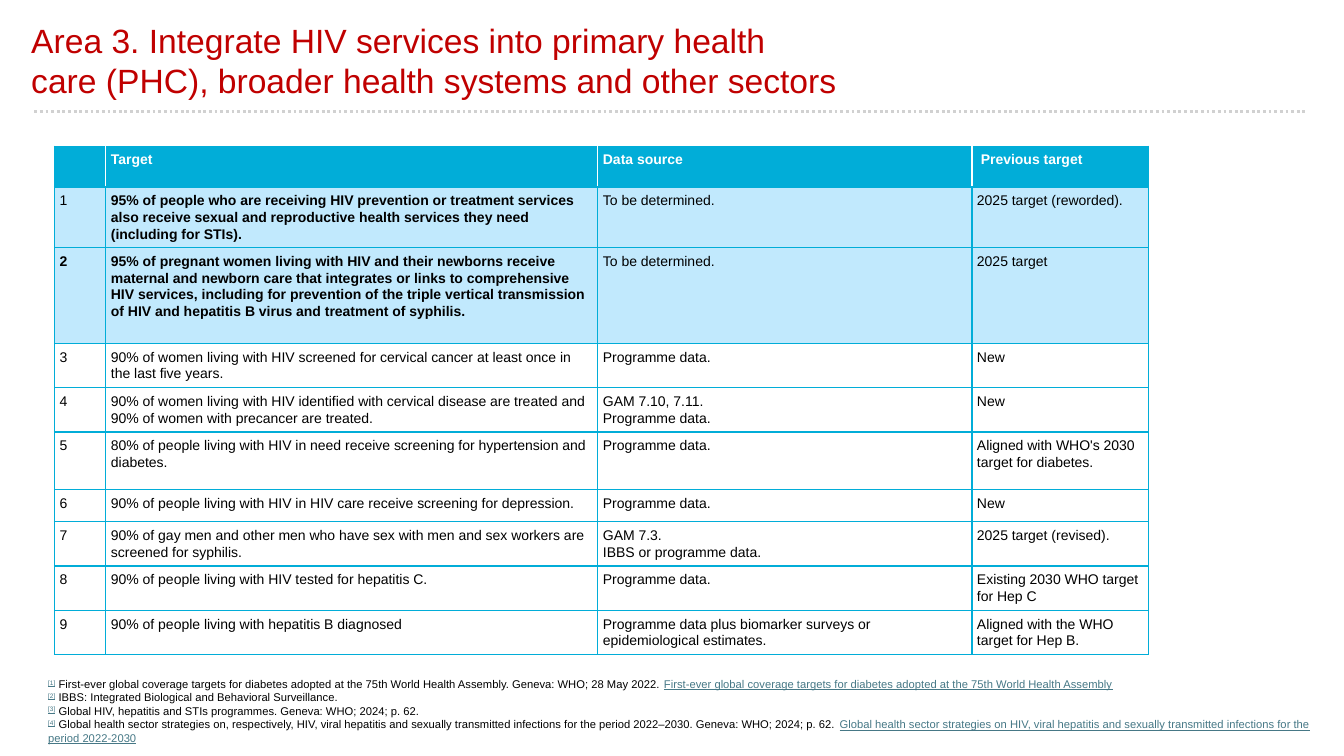
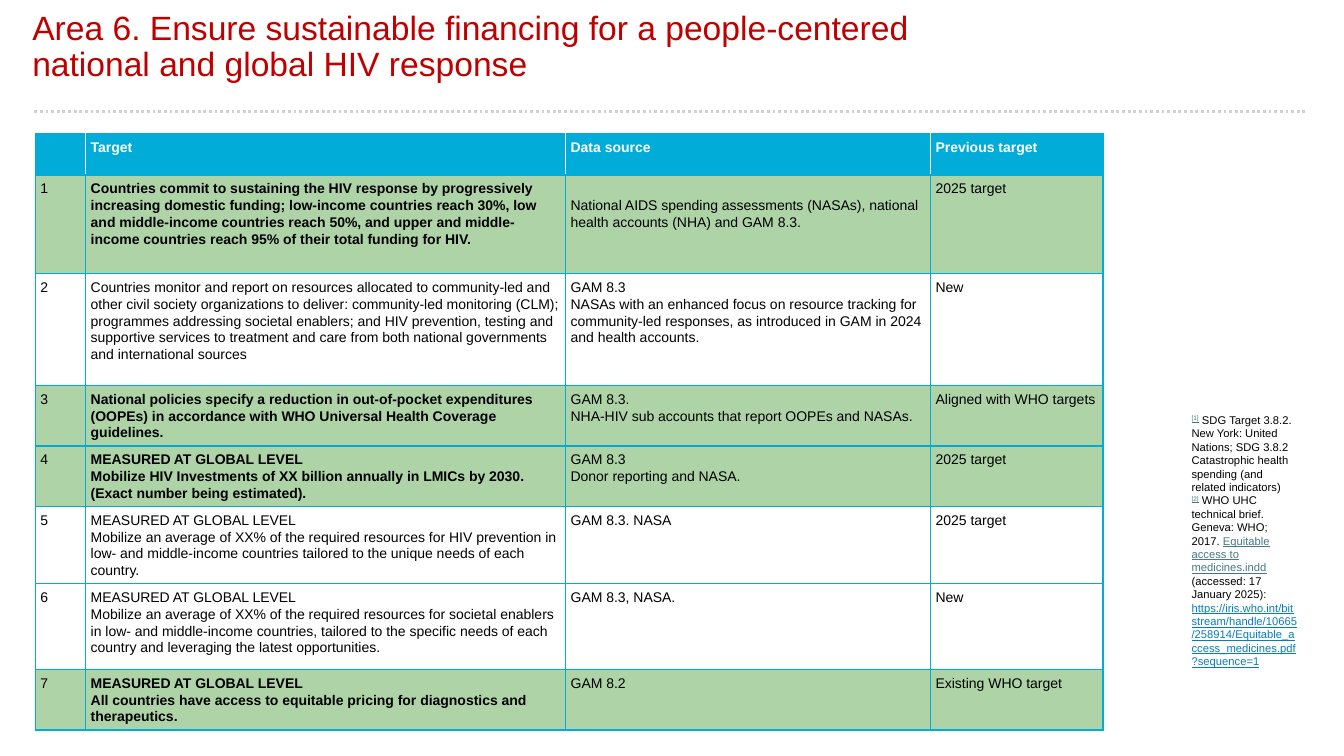
from lxml.etree import SubElement as Sub
from pptx import Presentation
from pptx.dml.color import RGBColor as RGB
from pptx.enum.dml import MSO_LINE as Dash
from pptx.enum.shapes import MSO_CONNECTOR as Link
from pptx.enum.text import MSO_ANCHOR as Anchor, PP_ALIGN as Align
from pptx.oxml.ns import qn
from pptx.util import Inches, Pt

FONT = "Arial"
RED = RGB(0xC0, 0x00, 0x00)
CYAN = RGB(0x01, 0xAD, 0xD8)
SKY = RGB(0xC1, 0xE9, 0xFD)
GREEN = RGB(0xAE, 0xD3, 0xA7)
GREY = RGB(0xD1, 0xD1, 0xD1)
TEAL = RGB(0x46, 0x78, 0x86)
BLUE = RGB(0x06, 0x7E, 0xBA)
WHITE = RGB(0xFF, 0xFF, 0xFF)
BLACK = RGB(0x00, 0x00, 0x00)

HEADS = ("", "Target", "Data source", "Previous target")
GLOBAL = "MEASURED AT GLOBAL LEVEL\n"
PROG = "Programme data."

CARE = [
    (0.57, "95% of people who are receiving HIV prevention or treatment services also "
     "receive sexual and reproductive health services they need (including for STIs).",
     "To be determined.", "2025 target (reworded)."),
    (0.95, "95% of pregnant women living with HIV and their newborns receive maternal and "
     "newborn care that integrates or links to comprehensive HIV services, including for "
     "prevention of the triple vertical transmission of HIV and hepatitis B virus and "
     "treatment of syphilis.", "To be determined.", "2025 target"),
    (0.44, "90% of women living with HIV screened for cervical cancer at least once in the "
     "last five years.", PROG, "New"),
    (0.44, "90% of women living with HIV identified with cervical disease are treated and "
     "90% of women with precancer are treated.", "GAM 7.10, 7.11.\n" + PROG, "New"),
    (0.57, "80% of people living with HIV in need receive screening for hypertension and "
     "diabetes.", PROG, "Aligned with WHO's 2030 target for diabetes."),
    (0.32, "90% of people living with HIV in HIV care receive screening for depression.",
     PROG, "New"),
    (0.44, "90% of gay men and other men who have sex with men and sex workers are screened "
     "for syphilis.", "GAM 7.3.\nIBBS or programme data.", "2025 target (revised)."),
    (0.44, "90% of people living with HIV tested for hepatitis C.", PROG,
     "Existing 2030 WHO target for Hep C"),
    (0.44, "90% of people living with hepatitis B diagnosed",
     "Programme data plus biomarker surveys or epidemiological estimates.",
     "Aligned with the WHO target for Hep B."),
]

FUNDS = [
    (0.98, "Countries commit to sustaining the HIV response by progressively increasing "
     "domestic funding; low-income countries reach 30%, low and middle-income countries "
     "reach 50%, and upper and middle-income countries reach 95% of their total funding "
     "for HIV.", "National AIDS spending assessments (NASAs), national health accounts "
     "(NHA) and GAM 8.3.", "2025 target"),
    (1.11, "Countries monitor and report on resources allocated to community-led and other "
     "civil society organizations to deliver: community-led monitoring (CLM); programmes "
     "addressing societal enablers; and HIV prevention, testing and supportive services to "
     "treatment and care from both national governments and international sources",
     "GAM 8.3\nNASAs with an enhanced focus on resource tracking for community-led "
     "responses, as introduced in GAM in 2024 and health accounts.", "New"),
    (0.58, "National policies specify a reduction in out-of-pocket expenditures (OOPEs) in "
     "accordance with WHO Universal Health Coverage guidelines.",
     "GAM 8.3.\nNHA-HIV sub accounts that report OOPEs and NASAs.",
     "Aligned with WHO targets"),
    (0.58, GLOBAL + "Mobilize HIV Investments of XX billion annually in LMICs by 2030. "
     "(Exact number being estimated).", "GAM 8.3\nDonor reporting and NASA.", "2025 target"),
    (0.71, GLOBAL + "Mobilize an average of XX% of the required resources for HIV prevention "
     "in low- and middle-income countries tailored to the unique needs of each country.",
     "GAM 8.3. NASA", "2025 target"),
    (0.85, GLOBAL + "Mobilize an average of XX% of the required resources for societal "
     "enablers in low- and middle-income countries, tailored to the specific needs of each "
     "country and leveraging the latest opportunities.", "GAM 8.3, NASA.", "New"),
    (0.45, GLOBAL + "All countries have access to equitable pricing for diagnostics and "
     "therapeutics.", "GAM 8.2", "Existing WHO target"),
]

CARE_NOTES = [
    [(" First-ever global coverage targets for diabetes adopted at the 75th World Health "
      "Assembly. Geneva: WHO; 28 May 2022. ", BLACK),
     ("First-ever global coverage targets for diabetes adopted at the 75th World Health "
      "Assembly", TEAL)],
    [(" IBBS: Integrated Biological and Behavioral Surveillance.", BLACK)],
    [(" Global HIV, hepatitis and STIs programmes. Geneva: WHO; 2024; p. 62.", BLACK)],
    [(" Global health sector strategies on, respectively, HIV, viral hepatitis and sexually "
      "transmitted infections for the period 2022–2030. Geneva: WHO; 2024; p. 62. ", BLACK),
     ("Global health sector strategies on HIV, viral hepatitis and sexually transmitted "
      "infections for the period 2022-2030", TEAL)],
]

FUND_NOTES = [
    [(" SDG Target 3.8.2. New York: United Nations; SDG 3.8.2 Catastrophic health spending "
      "(and related indicators)", BLACK)],
    [(" WHO UHC technical brief. Geneva: WHO; 2017. ", BLACK),
     ("Equitable access to medicines.indd", TEAL),
     (" (accessed: 17 January 2025): ", BLACK),
     ("https://iris.who.int/bitstream/handle/10665/258914/"
      "Equitable_access_medicines.pdf?sequence=1", BLUE)],
]


def add_text(para, text, size, color, bold=False):
    """Add one formatted run to a paragraph and return it."""
    run = para.add_run()
    run.text = text
    font = run.font
    font.name, font.size, font.bold = FONT, Pt(size), bold
    font.color.rgb = color
    return run


def add_rule(slide):
    """Draw the dotted rule below the title."""
    rule = slide.shapes.add_connector(
        Link.STRAIGHT, Inches(0.34), Inches(1.11), Inches(12.95), Inches(1.11))
    rule.line.color.rgb = GREY
    rule.line.width = Pt(2)
    rule.line.dash_style = Dash.ROUND_DOT
    Sub(rule._element.spPr, qn("a:effectLst"))


def add_title(slide, box, lines, anchor, space):
    """Place the title placeholder and fill its lines."""
    title = slide.shapes.title
    title.left, title.top, title.width, title.height = map(Inches, box)
    frame = title.text_frame
    frame.word_wrap = True
    frame.vertical_anchor = anchor
    frame.margin_top = frame.margin_bottom = Inches(0.03)
    para = frame.paragraphs[0]
    para.alignment, para.line_spacing = Align.LEFT, space
    for i, line in enumerate(lines):
        if i:
            para.add_line_break()
        add_text(para, line, 24, RED)


def add_edges(cell, sides):
    """Give a cell a solid one-point border on each side."""
    props = cell._tc.get_or_add_tcPr()
    for side in "LRTB":
        line = Sub(props, qn("a:ln" + side), w=str(Pt(1)))
        fill = Sub(line, qn("a:solidFill"))
        Sub(fill, qn("a:srgbClr"), val=str(sides.get(side, CYAN)))


def fill_cell(cell, text, back, color, bold, sides):
    """Format one table cell and write its text."""
    add_edges(cell, sides)
    cell.fill.solid()
    cell.fill.fore_color.rgb = back
    cell.margin_left = cell.margin_right = Inches(0.05)
    cell.margin_top = cell.margin_bottom = Inches(0.05)
    frame = cell.text_frame
    for i, line in enumerate(text.split("\n")):
        para = frame.add_paragraph() if i else frame.paragraphs[0]
        para.line_spacing = Pt(12)
        if line:
            add_text(para, line, 10, color, bold)


def add_grid(slide, left, top, cols, heads, rows, hot, tint, strong=()):
    """Build the target table, tinting the rows listed in hot."""
    highs = [0.32] + [row[0] for row in rows]
    grid = slide.shapes.add_table(
        len(highs), len(cols), Inches(left), Inches(top),
        Inches(sum(cols)), Inches(sum(highs))).table
    grid.horz_banding = False
    for col, wide in zip(grid.columns, cols):
        col.width = Inches(wide)
    for row, high in zip(grid.rows, highs):
        row.height = Inches(high)
    last = len(cols) - 1
    for c, head in enumerate(heads):
        sides = {"L": WHITE if c else CYAN, "R": WHITE if c < last else CYAN}
        fill_cell(grid.cell(0, c), head, CYAN, WHITE, True, sides)
    for r, (_, *texts) in enumerate(rows, 1):
        back = tint if r in hot else WHITE
        for c, text in enumerate([str(r)] + texts):
            bold = (r in hot and c == 1) or (r, c) in strong
            fill_cell(grid.cell(r, c), text, back, BLACK, bold, {})
    return grid


def add_notes(slide, box, notes):
    """Write the numbered source notes in a text box."""
    frame = slide.shapes.add_textbox(*map(Inches, box)).text_frame
    frame.word_wrap = True
    for i, parts in enumerate(notes):
        para = frame.add_paragraph() if i else frame.paragraphs[0]
        mark = add_text(para, f"[{i + 1}]", 8, TEAL)
        mark.font.underline = True
        mark._r.get_or_add_rPr().set("baseline", "30000")
        for text, color in parts:
            run = add_text(para, text, 8, color)
            run.font.underline = color != BLACK


def add_care(slide):
    """Build the slide on integrated services."""
    add_rule(slide)
    add_title(slide, (0.21, -0.13, 11.5, 1.45),
              ("Area 3. Integrate HIV services into primary health",
               "care (PHC), broader health systems and other sectors"),
              Anchor.MIDDLE, 1.0)
    heads = HEADS[:3] + (" " + HEADS[3],)
    add_grid(slide, 0.54, 1.45, (0.51, 4.88, 3.71, 1.75), heads, CARE,
             (1, 2), SKY, ((2, 0),))
    add_notes(slide, (0.38, 6.67, 12.76, 0.77), CARE_NOTES)


def add_funds(slide):
    """Build the slide on financing."""
    add_rule(slide)
    add_title(slide, (0.22, 0.08, 11.5, 1.45),
              ("Area 6. Ensure sustainable financing for a people-centered",
               "national and global HIV response"), Anchor.TOP, 0.9)
    grid = add_grid(slide, 0.35, 1.33, (0.5, 4.76, 3.62, 1.71), HEADS, FUNDS,
                    (1, 3, 4, 7), GREEN)
    grid.cell(1, 2).margin_top = Inches(0.22)
    add_notes(slide, (11.72, 4.05, 1.26, 2.96), FUND_NOTES)


def main():
    """Build and save the deck."""
    deck = Presentation()
    deck.slide_width, deck.slide_height = Inches(13.33), Inches(7.5)
    for build in (add_care, add_funds):
        build(deck.slides.add_slide(deck.slide_layouts[5]))
    deck.save("out.pptx")


if __name__ == "__main__":
    main()
